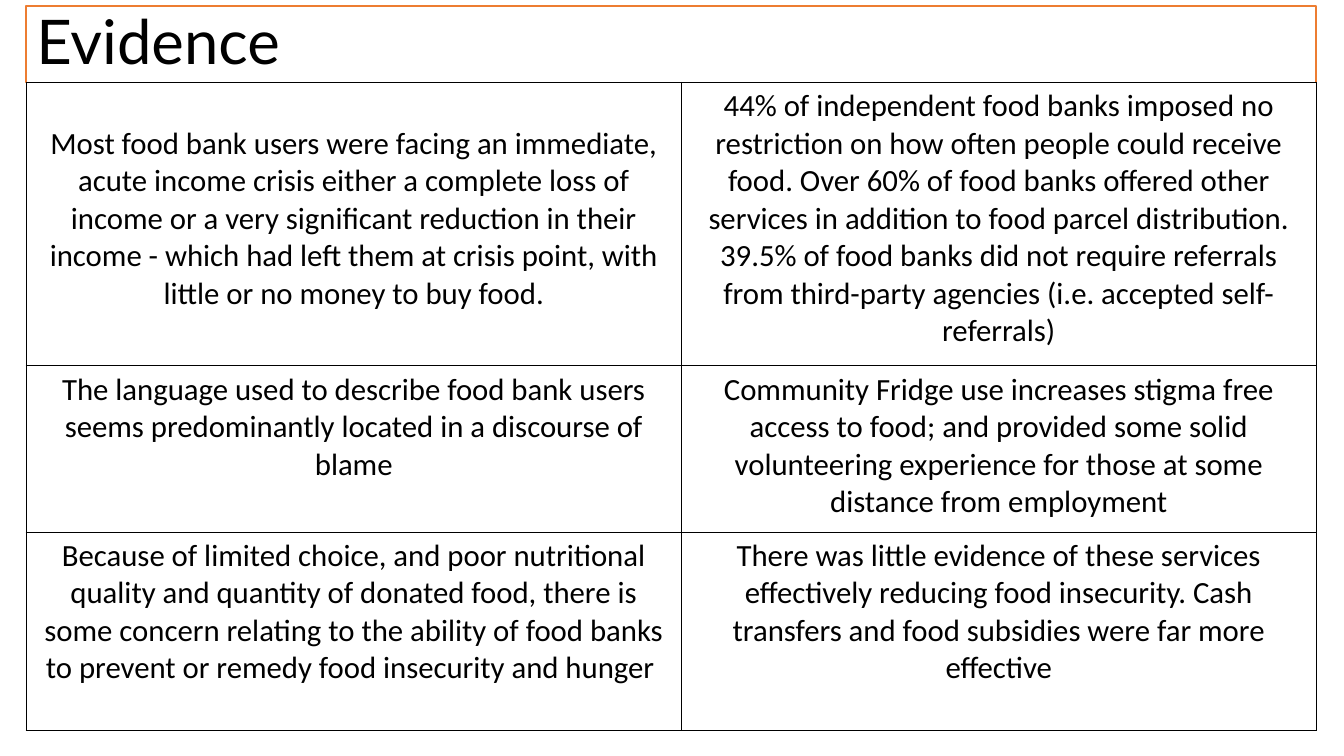
import pptx
import pptx.dml.color
import pptx.enum.text
import pptx.oxml
import pptx.oxml.ns
import pptx.util

Cm = pptx.util.Cm
Pt = pptx.util.Pt
Align = pptx.enum.text.PP_ALIGN
Anchor = pptx.enum.text.MSO_ANCHOR


def color(code):
    return pptx.dml.color.RGBColor.from_string(code)


class Board:
    ink = "000000"
    paper = "FFFFFF"
    accent = "ED7D31"
    left, width = 0.66, 32.51

    def __init__(self, deck):
        self.slide = deck.slides.add_slide(deck.slide_layouts[5])

    def style(self, para, font, size, align):
        para.alignment = align
        for run in para.runs:
            run.font.name = font
            run.font.size = Pt(size)
            run.font.color.rgb = color(self.ink)

    def title(self, text, top, height):
        box = self.slide.shapes.title
        box.left, box.top = Cm(self.left), Cm(top)
        box.width, box.height = Cm(self.width), Cm(height)
        box.fill.solid()
        box.fill.fore_color.rgb = color(self.paper)
        box.line.color.rgb = color(self.accent)
        box.line.width = Pt(1)
        frame = box.text_frame
        frame.text = text
        frame.word_wrap = True
        frame.auto_size = pptx.enum.text.MSO_AUTO_SIZE.NONE
        frame.vertical_anchor = Anchor.MIDDLE
        frame.paragraphs[0].line_spacing = 0.9
        self.style(frame.paragraphs[0], "Lato", 44, Align.LEFT)

    def border(self, cell):
        props = cell._tc.get_or_add_tcPr()
        space = pptx.oxml.ns.nsdecls("a")
        for side in "LRTB":
            props.append(pptx.oxml.parse_xml(
                f'<a:ln{side} {space} w="12700"><a:solidFill>'
                f'<a:srgbClr val="{self.ink}"/></a:solidFill></a:ln{side}>'))

    def table(self, rows, top, widths, heights):
        frame = self.slide.shapes.add_table(
            len(rows), len(widths), Cm(self.left), Cm(top),
            Cm(self.width), Cm(sum(heights)))
        grid = frame.table
        grid.first_row = grid.horz_banding = False
        for column, width in zip(grid.columns, widths):
            column.width = Cm(width)
        for row, height, texts in zip(grid.rows, heights, rows):
            row.height = Cm(height)
            for cell, text in zip(row.cells, texts):
                cell.text_frame.text = text
                self.style(cell.text_frame.paragraphs[0],
                           "Calibri", 22, Align.CENTER)
                self.border(cell)
                cell.fill.background()
        return grid


def main():
    deck = pptx.Presentation()
    deck.slide_width, deck.slide_height = Cm(33.87), Cm(19.05)
    board = Board(deck)
    board.title("Evidence", 0.15, 1.93)
    rows = [
        ("Most food bank users were facing an immediate, acute income crisis "
         "either a complete loss of income or a very significant reduction in "
         "their income - which had left them at crisis point, with little or "
         "no money to buy food.",
         "44% of independent food banks imposed no restriction on how often "
         "people could receive food. Over 60% of food banks offered other "
         "services in addition to food parcel distribution. 39.5% of food "
         "banks did not require referrals from third-party agencies (i.e. "
         "accepted self-referrals)"),
        ("The language used to describe food bank users seems predominantly "
         "located in a discourse of blame",
         "Community Fridge use increases stigma free access to food; and "
         "provided some solid volunteering experience for those at some "
         "distance from employment"),
        ("Because of limited choice, and poor nutritional quality and "
         "quantity of donated food, there is some concern relating to the "
         "ability of food banks to prevent or remedy food insecurity and "
         "hunger ",
         "There was little evidence of these services effectively reducing "
         "food insecurity. Cash transfers and food subsidies were far more "
         "effective"),
    ]
    grid = board.table(rows, 2.08, (16.51, 16), (7.14, 4.19, 5))
    grid.cell(0, 0).margin_top = Cm(1.07)
    deck.save("out.pptx")


if __name__ == "__main__":
    main()
